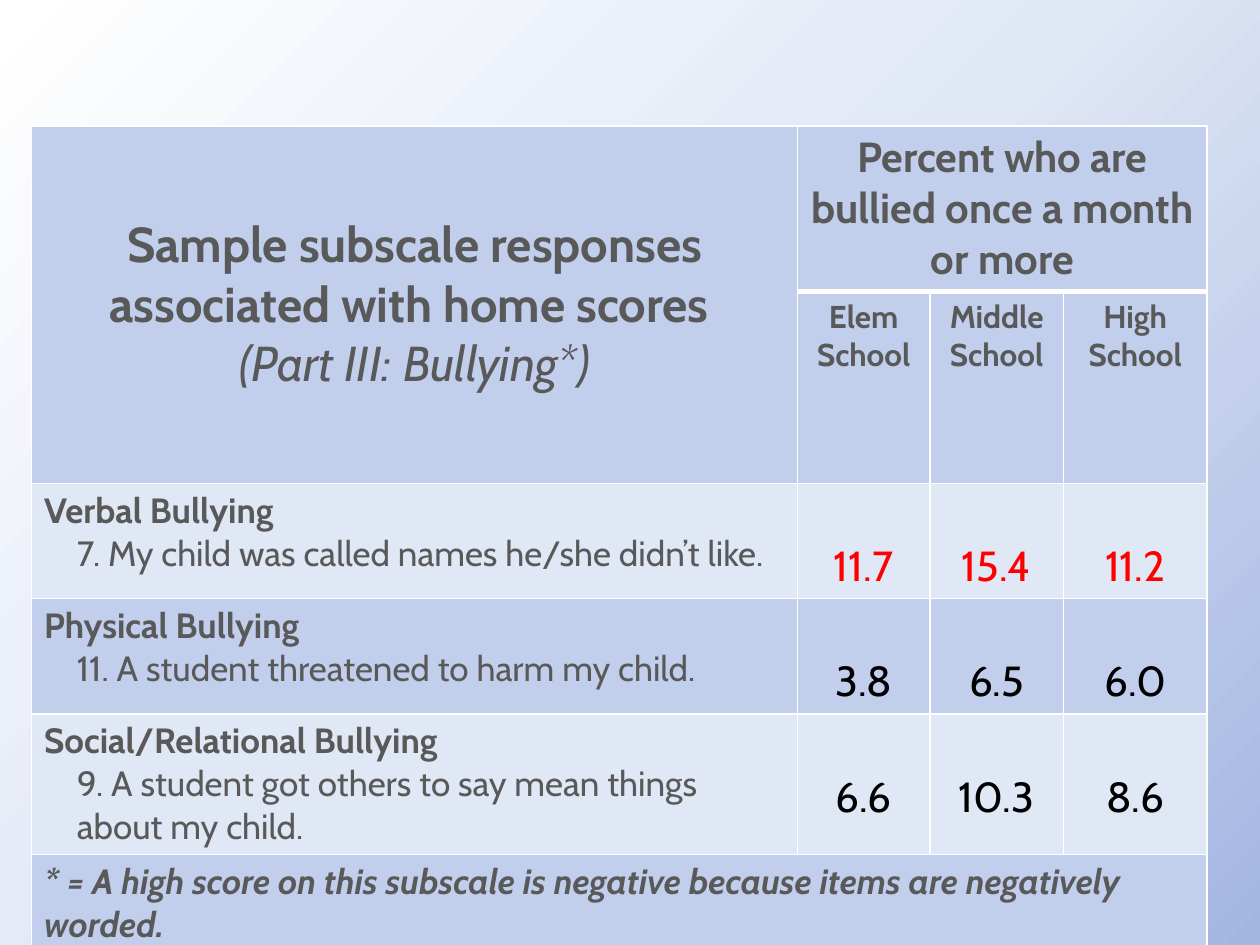
from pptx import Presentation
from pptx.dml.color import RGBColor
from pptx.enum.text import MSO_ANCHOR, PP_ALIGN
from pptx.oxml import parse_xml
from pptx.oxml.ns import nsdecls
from pptx.util import Inches, Pt

GREY, RED, BLACK, WHITE = "595959", "FF0000", "000000", "FFFFFF"
MID, PALE = "C1CEEC", "E0E7F5"
COLS = (60.8, 10.5, 10.6, 11.4)
ROWS = (17.47, 20.27, 12.13, 12.13, 14.8, 8.13)
ITEMS = (
    ("Verbal Bullying", "7. My child was called names he/she didn’t like.",
     ("11.7", "15.4", "11.2"), RED),
    ("Physical Bullying", "11. A student threatened to harm my child.",
     ("3.8", "6.5", "6.0"), BLACK),
    ("Social/Relational Bullying",
     "9. A student got others to say mean things about my child.",
     ("6.6", "10.3", "8.6"), BLACK),
)


def rgb(color):
    return RGBColor.from_string(color)


class Deck:
    """Holds the style and the current slide; lengths are percent of the slide."""

    def __init__(self, font="Cabin"):
        self.font = font
        self.prs = Presentation()
        self.prs.slide_width, self.prs.slide_height = Inches(10), Inches(7.5)
        self.s = self.prs.slides.add_slide(self.prs.slide_layouts[6])

    def x(self, share):
        return round(self.prs.slide_width * share / 100)

    def y(self, share):
        return round(self.prs.slide_height * share / 100)

    def background(self, stops):
        gs = "".join(f'<a:gs pos="{pos * 1000}"><a:srgbClr val="{color}"/></a:gs>'
                     for pos, color in stops)
        self.s.element.cSld.insert(0, parse_xml(
            f'<p:bg {nsdecls("p", "a")}><p:bgPr><a:gradFill><a:gsLst>{gs}</a:gsLst>'
            '<a:path path="circle"><a:fillToRect l="100000" t="100000"/></a:path>'
            '</a:gradFill><a:effectLst/></p:bgPr></p:bg>'))

    def table(self, left, top, cols, rows):
        frame = self.s.shapes.add_table(len(rows), len(cols), self.x(left), self.y(top),
                                        self.x(sum(cols)), self.y(sum(rows)))
        table = frame.table
        for col, width in zip(table.columns, cols):
            col.width = self.x(width)
        for row, height in zip(table.rows, rows):
            row.height = self.y(height)
        return table

    def paint(self, cell, fill, top=1, bottom=1):
        cell.fill.solid()
        cell.fill.fore_color.rgb = rgb(fill)
        tcPr = cell._tc.get_or_add_tcPr()
        for i, (side, width) in enumerate(zip("LRTB", (1, 1, top, bottom))):
            tcPr.insert(i, parse_xml(
                f'<a:ln{side} {nsdecls("a")} w="{Pt(width)}"><a:solidFill>'
                f'<a:srgbClr val="{WHITE}"/></a:solidFill></a:ln{side}>'))

    def text(self, cell, text, size, color=GREY, bold=True, italic=False, center=True):
        tf = cell.text_frame
        tf.text = text
        for p in tf.paragraphs:
            p.alignment = PP_ALIGN.CENTER if center else PP_ALIGN.LEFT
            for r in p.runs:
                r.font.name, r.font.size = self.font, Pt(size)
                r.font.bold, r.font.italic = bold, italic
                r.font.color.rgb = rgb(color)
        return tf


def main():
    deck = Deck()
    deck.background(((0, "A3B6E2"), (50, PALE), (100, WHITE)))
    table = deck.table(2.5, 13.33, COLS, ROWS)
    for i in range(len(ROWS)):
        for j in range(len(COLS)):
            deck.paint(table.cell(i, j), PALE if i in (2, 4) else MID,
                       top=3 if i == 1 and j else 1, bottom=3 if i == 0 and j else 1)
    for start, end in (((0, 0), (1, 0)), ((0, 1), (0, 3)), ((5, 0), (5, 3))):
        table.cell(*start).merge(table.cell(*end))

    title = table.cell(0, 0)
    title.vertical_anchor = MSO_ANCHOR.MIDDLE
    tf = deck.text(title, "Sample subscale responses associated with home scores "
                   "\v(Part III: Bullying*)", 28)
    part = tf.paragraphs[0].runs[-1]
    part.font.bold, part.font.italic = False, True
    deck.text(table.cell(0, 1), "Percent who are bullied once a month or more", 24)
    for j, school in enumerate(("Elem\nSchool", "Middle School", "High School"), 1):
        deck.text(table.cell(1, j), school, 18)

    for i, (heading, item, values, color) in enumerate(ITEMS, 2):
        tf = deck.text(table.cell(i, 0), f"{heading}\n{item}", 20, center=False)
        p = tf.paragraphs[1]
        p.runs[0].font.bold = False
        p._p.get_or_add_pPr().set("marL", str(Inches(0.26)))
        for j, value in enumerate(values, 1):
            cell = table.cell(i, j)
            cell.margin_top = deck.y(6.13)
            deck.text(cell, value, 24, color, bold=False)

    deck.text(table.cell(5, 0), "* = A high score on this subscale is negative because "
              "items are negatively worded.", 20, bold=True, italic=True, center=False)
    deck.prs.save("out.pptx")


if __name__ == "__main__":
    main()
